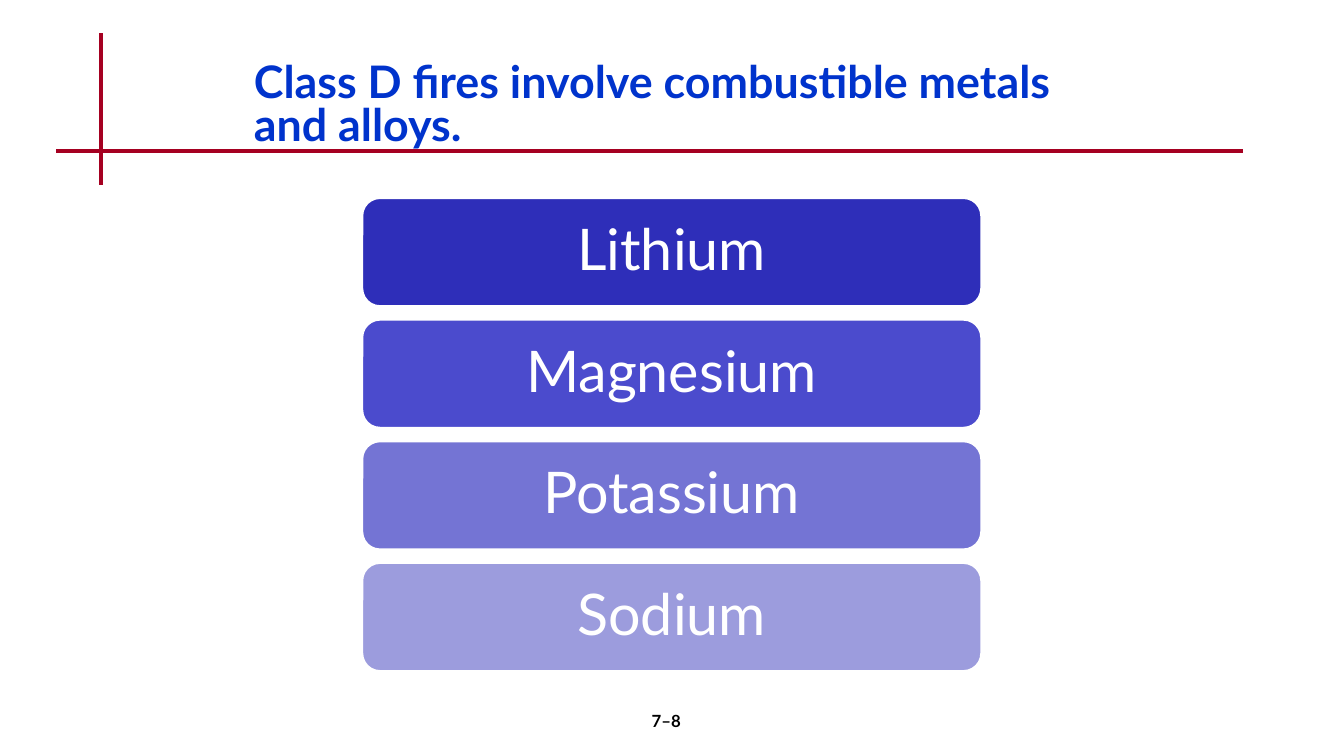
from dataclasses import dataclass

from lxml import etree
from pptx import Presentation
from pptx.dml.color import RGBColor
from pptx.enum.shapes import MSO_CONNECTOR, MSO_SHAPE
from pptx.enum.text import MSO_ANCHOR, PP_ALIGN
from pptx.oxml.ns import qn
from pptx.util import Cm, Pt

STRAIGHT = MSO_CONNECTOR.STRAIGHT
ROUNDED = MSO_SHAPE.ROUNDED_RECTANGLE
TOP, MIDDLE = MSO_ANCHOR.TOP, MSO_ANCHOR.MIDDLE
LEFT, CENTER = PP_ALIGN.LEFT, PP_ALIGN.CENTER


@dataclass(frozen=True)
class Theme:
    """Colours, typeface and sizes of the slide."""
    font: str = "Lato"
    title: str = "0033CC"
    rule: str = "A50021"
    white: str = "FFFFFF"
    black: str = "000000"
    bars: tuple = ("2E2EB9", "4B4BCD", "7474D4", "9C9CDD")
    title_size: int = 32
    bar_size: int = 41
    number_size: int = 12


THEME = Theme()


def write(shape, text, size, color, bold=False, align=CENTER, anchor=TOP, spacing=1.0):
    """Put one styled paragraph into a shape."""
    frame = shape.text_frame
    frame.word_wrap = True
    frame.vertical_anchor = anchor
    para = frame.paragraphs[0]
    para.text = text
    para.alignment = align
    para.line_spacing = spacing
    para.font.name = THEME.font
    para.font.size = Pt(size)
    para.font.bold = bold
    para.font.color.rgb = RGBColor.from_string(color)


def add_rule(page, x1, y1, x2, y2):
    """Draw one straight heading rule, in centimetres."""
    rule = page.shapes.add_connector(STRAIGHT, Cm(x1), Cm(y1), Cm(x2), Cm(y2))
    rule.line.color.rgb = RGBColor.from_string(THEME.rule)
    rule.line.width = Pt(3)
    etree.SubElement(rule._element.spPr, qn("a:effectLst"))


def add_heading(page, left, top, width, height, title):
    """Draw the crossed rules and the title resting on the long one."""
    cross_x, cross_y = left + 1.12, top + 2.97
    add_rule(page, cross_x, top, cross_x, top + height)
    add_rule(page, left, cross_y, left + width, cross_y)
    box = page.shapes.add_textbox(Cm(left + 4.73), Cm(top + 0.66), Cm(21.56), Cm(2.31))
    write(box, title, THEME.title_size, THEME.title, bold=True, align=LEFT, spacing=0.8)


def add_bars(page, left, top, width, height, labels, gap=0.32):
    """Stack equal rounded bars in the given box."""
    bar_height = (height - gap * (len(labels) - 1)) / len(labels)
    for index, (label, color) in enumerate(zip(labels, THEME.bars)):
        bar_top = top + index * (bar_height + gap)
        bar = page.shapes.add_shape(ROUNDED, Cm(left), Cm(bar_top), Cm(width), Cm(bar_height))
        bar.shadow.inherit = False
        bar.fill.solid()
        bar.fill.fore_color.rgb = RGBColor.from_string(color)
        bar.line.color.rgb = RGBColor.from_string(THEME.white)
        bar.line.width = Pt(2)
        write(bar, label, THEME.bar_size, THEME.white, anchor=MIDDLE, spacing=0.9)


def add_page_number(page, left, top, width, height, number):
    """Centre the page number in its box."""
    box = page.shapes.add_textbox(Cm(left), Cm(top), Cm(width), Cm(height))
    write(box, number, THEME.number_size, THEME.black, bold=True)


def main():
    """Build and save the slide."""
    deck = Presentation()
    deck.slide_width, deck.slide_height = Cm(33.87), Cm(19.05)
    page = deck.slides.add_slide(deck.slide_layouts[6])
    add_heading(page, 1.42, 0.84, 29.9, 3.81,
                "Class D fires involve combustible metals and alloys.")
    add_bars(page, 9.12, 4.98, 15.62, 11.94,
             ("Lithium", "Magnesium", "Potassium", "Sodium"))
    add_page_number(page, 13.26, 17.78, 7.06, 1.27, "7–8")
    deck.save("out.pptx")


if __name__ == "__main__":
    main()
